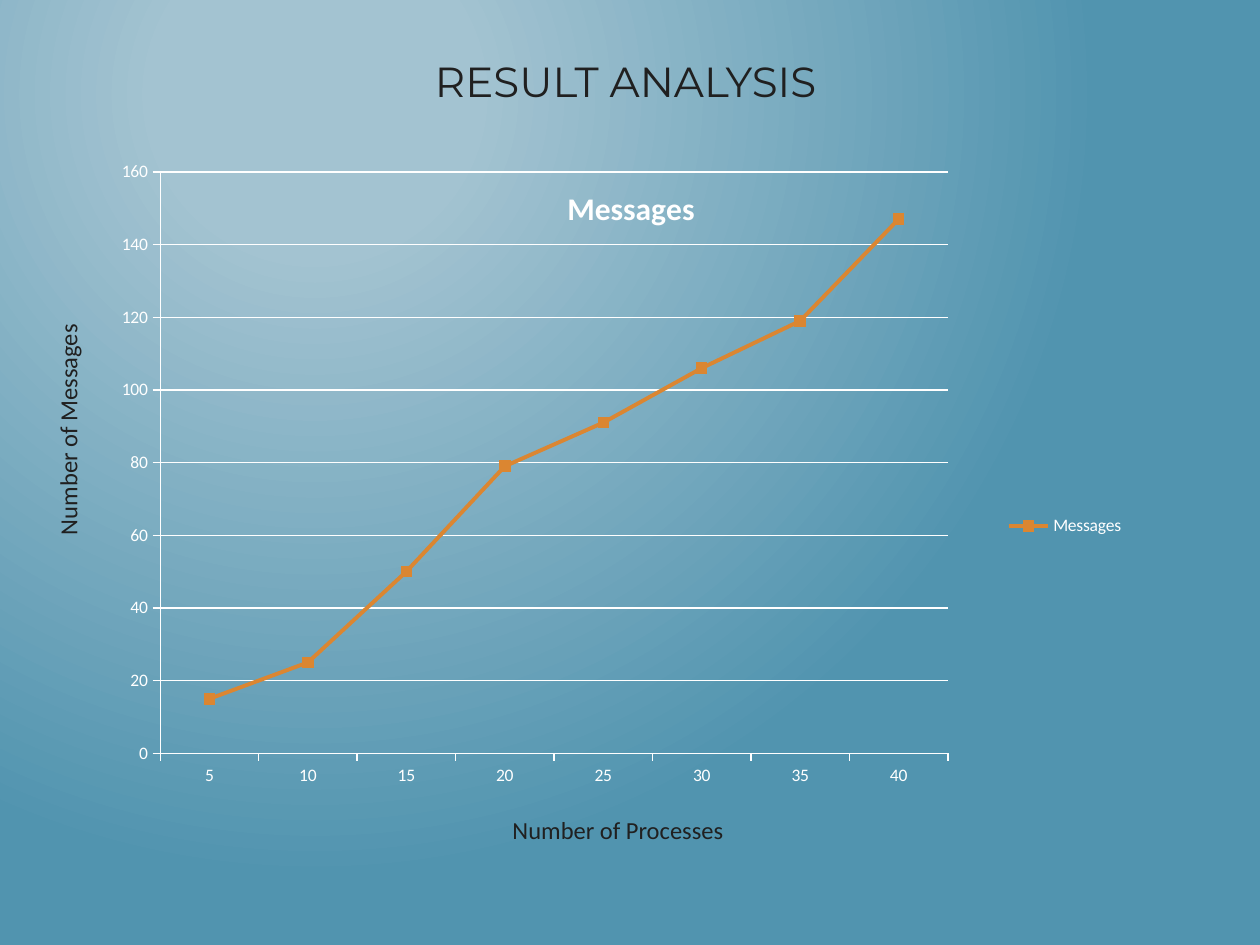
from dataclasses import dataclass

from lxml import etree
from pptx import Presentation
from pptx.chart.data import CategoryChartData
from pptx.dml.color import RGBColor
from pptx.enum.chart import XL_CHART_TYPE, XL_LEGEND_POSITION, XL_MARKER_STYLE, XL_TICK_MARK
from pptx.enum.text import PP_ALIGN
from pptx.oxml.ns import qn
from pptx.util import Inches, Pt

LINE = XL_CHART_TYPE.LINE_MARKERS
RIGHT = XL_LEGEND_POSITION.RIGHT
SQUARE = XL_MARKER_STYLE.SQUARE
OUT, NONE = XL_TICK_MARK.OUTSIDE, XL_TICK_MARK.NONE
CENTER = PP_ALIGN.CENTER

WIDE, HIGH = Inches(10), Inches(7.5)
HUES = {"ink": "202020", "white": "FFFFFF", "line": "DB8631",
        "glow": "A3C3D1", "sea": "5194AF"}
COUNTS = {5: 15, 10: 25, 15: 50, 20: 79, 25: 91, 30: 106, 35: 119, 40: 147}


@dataclass
class Box:
    """Place as percent of the slide's width and height."""
    left: float
    top: float
    width: float
    height: float

    def emu(self) -> tuple[int, ...]:
        return (int(WIDE * self.left / 100), int(HIGH * self.top / 100),
                int(WIDE * self.width / 100), int(HIGH * self.height / 100))


@dataclass
class Label:
    text: str
    box: Box
    size: int
    face: str = "Calibri"
    turned: bool = False


LABELS = [
    Label("RESULT ANALYSIS", Box(7.5, 5.2, 84.3, 11.2), 24, "Montserrat"),
    Label("Number of Messages", Box(3.7, 20.8, 4.4, 49.33), 14, turned=True),
    Label("Number of Processes", Box(32.1, 85.6, 33.9, 4.53), 14),
]
CHART = Box(3.7, 16.13, 92.9, 73.87)


def hue(name: str) -> RGBColor:
    return RGBColor.from_string(HUES[name])


def paint(slide) -> None:
    """Fill the background with a round glow."""
    fill = slide.background.fill
    fill.gradient()
    for stop, name, spot in zip(fill.gradient_stops, ("glow", "sea"), (0.2, 1)):
        stop.color.rgb = hue(name)
        stop.position = spot
    grad = slide.element.find(".//" + qn("a:gradFill"))
    grad.remove(grad.find(qn("a:lin")))
    path = etree.SubElement(grad, qn("a:path"), path="circle")
    etree.SubElement(path, qn("a:fillToRect"), l="50000", t="20000",
                     r="100000", b="100000")


def write(slide, label: Label) -> None:
    frame = slide.shapes.add_textbox(*label.box.emu()).text_frame
    frame.word_wrap = True
    if label.turned:
        frame._txBody.bodyPr.set("vert", "vert270")
    para = frame.paragraphs[0]
    para.text = label.text
    para.alignment = CENTER
    para.font.size = Pt(label.size)
    para.font.name = label.face
    para.font.color.rgb = hue("ink")


def place(part, inner: bool = False, **shares: float) -> None:
    """Set a chart part's place as shares of the chart."""
    old = part.find(qn("c:layout"))
    if old is not None:
        part.remove(old)
    layout = etree.Element(qn("c:layout"))
    manual = etree.SubElement(layout, qn("c:manualLayout"))
    if inner:
        etree.SubElement(manual, qn("c:layoutTarget"), val="inner")
    for key in ("x", "y"):
        etree.SubElement(manual, qn(f"c:{key}Mode"), val="edge")
    for key, share in shares.items():
        etree.SubElement(manual, qn(f"c:{key}"), val=str(share))
    over = part.find(qn("c:overlay"))
    if over is None:
        part.insert(0, layout)
    else:
        over.addprevious(layout)


def rule(line, name: str, width: float) -> None:
    line.color.rgb = hue(name)
    line.width = Pt(width)


def plot(slide) -> None:
    data = CategoryChartData()
    data.categories = [str(count) for count in COUNTS]
    data.add_series("Messages", list(COUNTS.values()))
    chart = slide.shapes.add_chart(LINE, *CHART.emu(), data).chart
    chart.font.size = Pt(10)
    chart.font.name = "Calibri"
    chart.font.color.rgb = hue("white")

    # Title and legend
    chart.has_title = True
    title = chart.chart_title
    para = title.text_frame.paragraphs[0]
    para.text = "Messages"
    para.font.size = Pt(18)
    para.font.bold = True
    para.font.name = "Calibri"
    para.font.color.rgb = hue("white")
    place(title._element, x=0.44, y=0.04)
    chart.has_legend = True
    chart.legend.position = RIGHT
    chart.legend.include_in_layout = False
    place(chart.legend._element, x=0.81, y=0.51, w=0.12, h=0.05)
    place(chart._chartSpace.chart.plotArea, inner=True,
          x=0.097, y=0.028, w=0.673, h=0.833)

    # Axes
    for axis in (chart.category_axis, chart.value_axis):
        axis.major_tick_mark = OUT
        axis.minor_tick_mark = NONE
        rule(axis.format.line, "white", 0.75)
    scale = chart.value_axis
    scale.minimum_scale, scale.maximum_scale, scale.major_unit = 0, 160, 20
    scale.has_major_gridlines = True
    rule(scale.major_gridlines.format.line, "white", 0.75)

    # Series
    chart.plots[0].vary_by_categories = False
    series = chart.plots[0].series[0]
    series.smooth = False
    rule(series.format.line, "line", 2.25)
    marker = series.marker
    marker.style = SQUARE
    marker.size = 6
    marker.format.fill.solid()
    marker.format.fill.fore_color.rgb = hue("line")
    marker.format.line.color.rgb = hue("line")


def main() -> None:
    deck = Presentation()
    deck.slide_width, deck.slide_height = WIDE, HIGH
    slide = deck.slides.add_slide(deck.slide_layouts[6])
    paint(slide)
    plot(slide)
    for label in LABELS:
        write(slide, label)
    deck.save("out.pptx")


if __name__ == "__main__":
    main()
